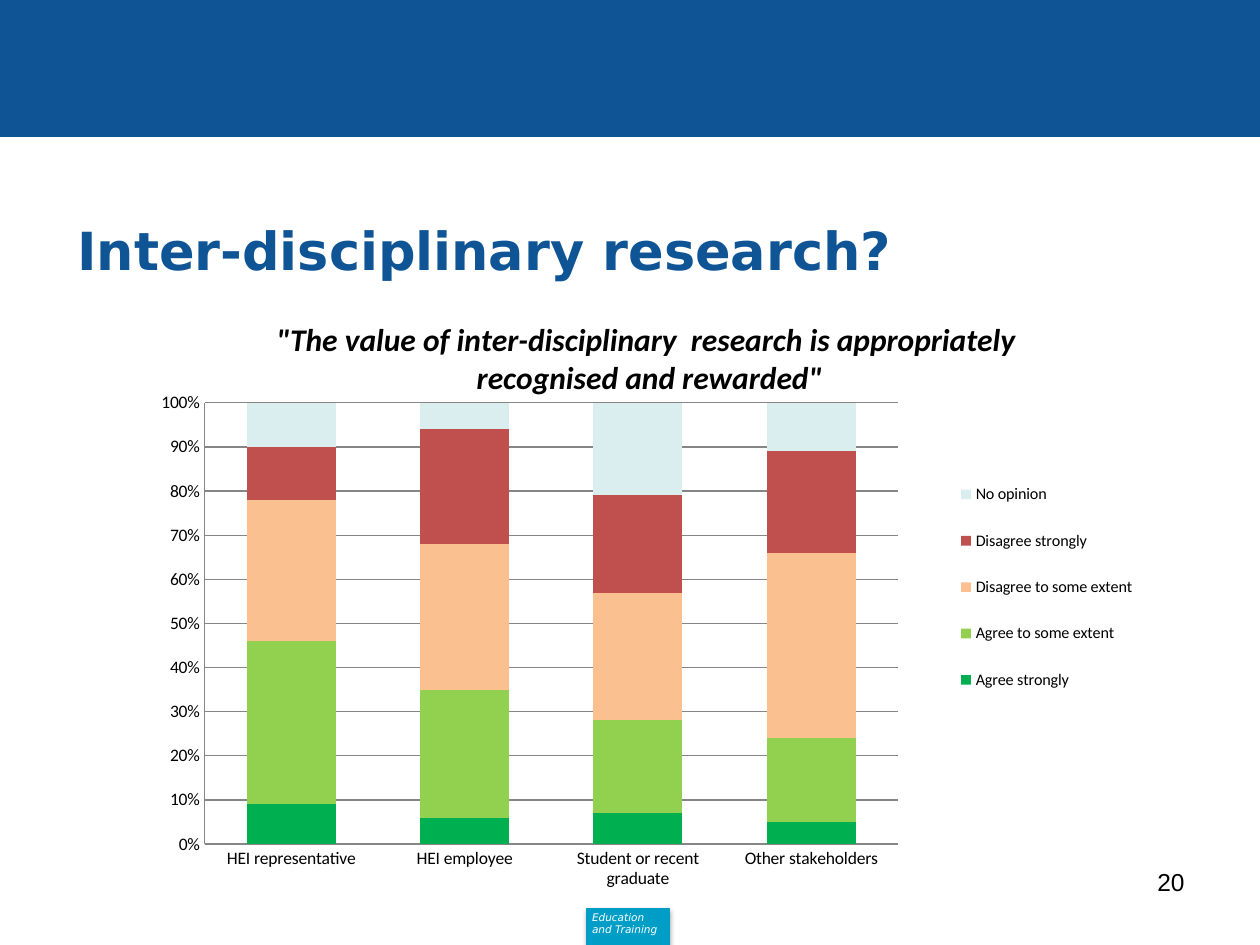
from lxml.etree import SubElement
from pptx import Presentation
from pptx.chart.data import CategoryChartData
from pptx.dml.color import RGBColor
from pptx.enum.chart import XL_CHART_TYPE, XL_LEGEND_POSITION, XL_TICK_MARK
from pptx.enum.shapes import MSO_SHAPE
from pptx.enum.text import MSO_ANCHOR, PP_ALIGN
from pptx.oxml import parse_xml
from pptx.oxml.ns import nsdecls, qn
from pptx.util import Pt

COLORS = {
    "blue": "0F5494", "cyan": "009EC7", "white": "FFFFFF", "black": "000000",
    "grid": "868686",
}
CATEGORIES = ["HEI representative", "HEI employee",
              "Student or recent graduate", "Other stakeholders"]
SERIES = [
    ("Agree strongly", "00B050", (9, 6, 7, 5)),
    ("Agree to some extent", "92D050", (37, 29, 21, 19)),
    ("Disagree to some extent", "FAC090", (32, 33, 29, 42)),
    ("Disagree strongly", "C0504D", (12, 26, 22, 23)),
    ("No opinion", "DAEDEF", (10, 6, 21, 11)),
]
QUESTION = ("\"The value of inter-disciplinary  research is appropriately "
            " recognised and rewarded\"")


def rgb(name):
    return RGBColor.from_string(COLORS[name])


def style_font(font, name, size, color, bold=False, italic=False):
    font.name, font.size = name, Pt(size)
    font.bold, font.italic = bold, italic
    font.color.rgb = rgb(color)


def add_span(para, text, *style, **flags):
    span = para.add_run()
    span.text = text
    style_font(span.font, *style, **flags)


def add_panel(page, box, color):
    panel = page.shapes.add_shape(MSO_SHAPE.RECTANGLE, *map(Pt, box))
    panel.shadow.inherit = False
    panel.fill.solid()
    panel.fill.fore_color.rgb = rgb(color)
    panel.line.color.rgb = rgb(color)
    panel.line.width = Pt(0.75)
    return panel


def add_text_box(page, box):
    """Add a wrapping text box and return its first paragraph."""
    frame = page.shapes.add_textbox(*map(Pt, box)).text_frame
    frame.word_wrap = True
    return frame.paragraphs[0]


def add_badge(page, box):
    left, top, width, height = box
    panel = add_panel(page, box, "cyan")
    effects = panel.element.spPr.find(qn("a:effectLst"))
    effects.append(parse_xml(
        f'<a:outerShdw {nsdecls("a")} blurRad="{Pt(3.1)}" dist="{Pt(1.8)}" '
        'dir="5400000" rotWithShape="0"><a:srgbClr val="000000">'
        '<a:alpha val="35000"/></a:srgbClr></a:outerShdw>'))
    para = add_text_box(page, (left - 4.3, top - 2.2, width + 13, height - 2))
    style = ("DejaVu Sans", 6, "white")
    add_span(para, "Education", *style, italic=True)
    para.add_line_break()
    add_span(para, "and Training", *style, italic=True)


def fill_title(page, box):
    title = page.shapes.title
    title.left, title.top, title.width, title.height = map(Pt, box)
    frame = title.text_frame
    frame.word_wrap = True
    frame.vertical_anchor = MSO_ANCHOR.MIDDLE
    para = frame.paragraphs[0]
    para.alignment = PP_ALIGN.LEFT
    add_span(para, "Inter-disciplinary research?", "DejaVu Sans", 30, "blue", bold=True)


def add_page_number(page, box):
    para = add_text_box(page, box)
    para.alignment = PP_ALIGN.RIGHT
    add_span(para, "20", "Arial", 14, "black")


def place_part(chart, tag, index, inner=False, **fractions):
    """Give a chart part a manual layout, as fractions of the chart."""
    part = chart.element.find(f".//{qn(tag)}")
    for old in part.findall(qn("c:layout")):
        part.remove(old)
    layout = parse_xml(f'<c:layout {nsdecls("c")}/>')
    manual = SubElement(layout, qn("c:manualLayout"))
    settings = {"layoutTarget": "inner"} if inner else {}
    settings.update(xMode="edge", yMode="edge", **fractions)
    for name, value in settings.items():
        SubElement(manual, qn(f"c:{name}")).set("val", str(value))
    part.insert(index, layout)


def style_axis(axis):
    axis.major_tick_mark = axis.minor_tick_mark = XL_TICK_MARK.NONE
    axis.format.line.color.rgb = rgb("grid")
    axis.format.line.width = Pt(0.75)
    style_font(axis.tick_labels.font, "Calibri", 10, "black")


def add_opinion_chart(page, box):
    data = CategoryChartData()
    data.categories = CATEGORIES
    for name, _, values in SERIES:
        data.add_series(name, values)
    chart = page.shapes.add_chart(
        XL_CHART_TYPE.COLUMN_STACKED_100, *map(Pt, box), data).chart
    style_font(chart.font, "Calibri", 10, "black")

    chart.has_title = True
    para = chart.chart_title.text_frame.paragraphs[0]
    add_span(para, QUESTION, "Calibri", 18, "black", bold=True, italic=True)
    place_part(chart, "c:title", 1, x=0.16, y=0.03)

    plot = chart.plots[0]
    plot.gap_width, plot.overlap = 95, 100
    plot.vary_by_categories = False
    for series, (_, color, _) in zip(plot.series, SERIES):
        series.format.fill.solid()
        series.format.fill.fore_color.rgb = RGBColor.from_string(color)
    place_part(chart, "c:plotArea", 0, inner=True, x=0.1, y=0.18, w=0.63, h=0.73)

    style_axis(chart.category_axis)
    value_axis = chart.value_axis
    style_axis(value_axis)
    value_axis.minimum_scale, value_axis.maximum_scale = 0, 1
    value_axis.major_unit = 0.1
    value_axis.tick_labels.number_format = "0%"
    value_axis.tick_labels.number_format_is_linked = False
    value_axis.major_gridlines.format.line.color.rgb = rgb("grid")
    value_axis.major_gridlines.format.line.width = Pt(0.75)

    chart.has_legend = True
    chart.legend.position = XL_LEGEND_POSITION.RIGHT
    chart.legend.include_in_layout = False
    style_font(chart.legend.font, "Calibri", 9.2, "black")
    place_part(chart, "c:legend", 1, x=0.77, y=0.27, w=0.19, h=0.43)


def main():
    deck = Presentation()
    deck.slide_width, deck.slide_height = Pt(720), Pt(540)
    page = deck.slides.add_slide(deck.slide_layouts[5])
    add_panel(page, (0, 0, 720, 78), "blue")
    add_badge(page, (335.5, 519, 47, 21.5))
    fill_title(page, (37, 106, 648, 73))
    add_page_number(page, (516, 492, 168, 37))
    add_opinion_chart(page, (54, 168, 629, 345.5))
    deck.save("out.pptx")


if __name__ == "__main__":
    main()
